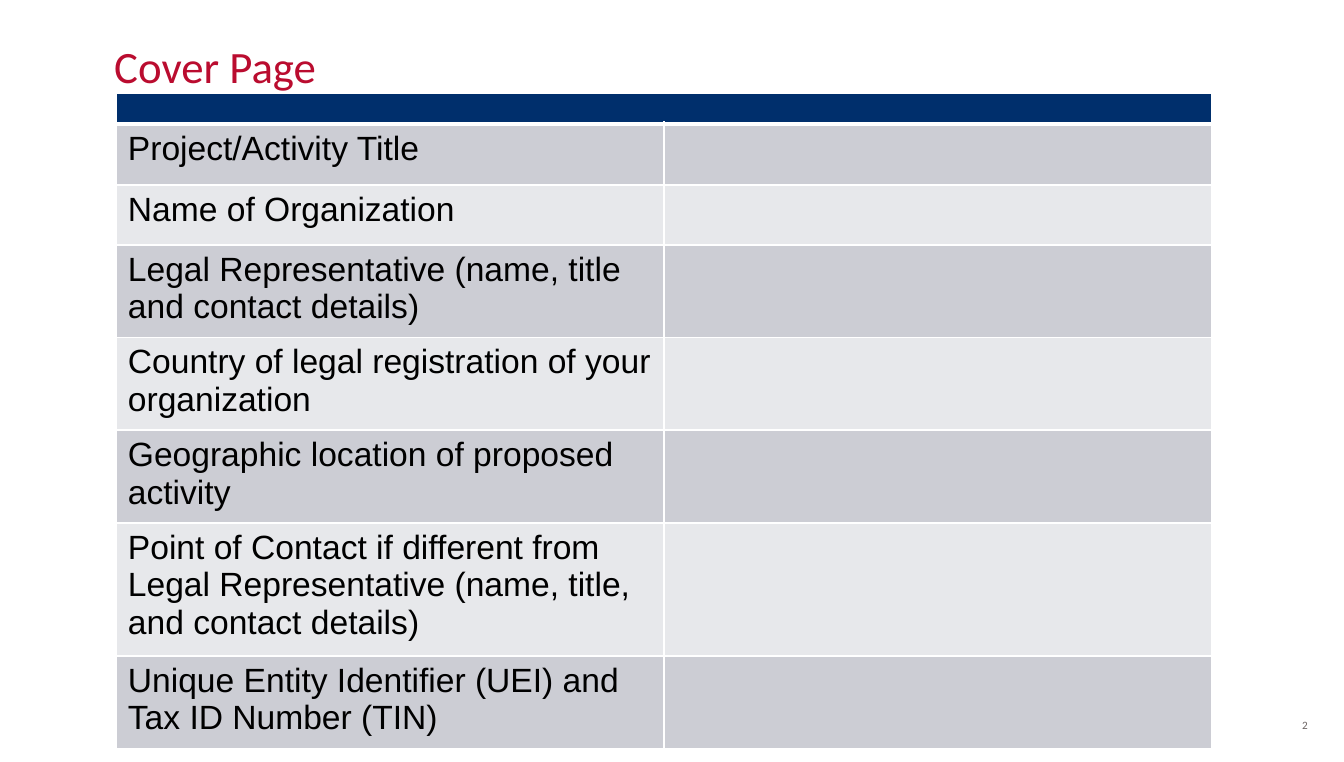
from dataclasses import dataclass

from lxml.etree import SubElement
from pptx import Presentation
from pptx.dml.color import RGBColor
from pptx.enum.text import MSO_ANCHOR, PP_ALIGN
from pptx.oxml.ns import qn
from pptx.util import Emu, Pt

TITLE = "Cover Page"
PAGE_NUMBER = "2"
# (label, row height in px)
FIELDS = [
    ("Project/Activity Title", 61),
    ("Name of Organization", 60),
    ("Legal Representative (name, title and contact details)", 89),
    ("Country of legal registration of your organization", 89),
    ("Geographic location of proposed activity", 89),
    ("Point of Contact if different from Legal Representative "
     "(name, title, and contact details)", 126),
    ("Unique Entity Identifier (UEI) and Tax ID Number (TIN)", 88),
]

SLIDE = (1344, 762)
TITLE_BOX = (101, 32, 1142, 67)
NUMBER_BOX = (1008, 712, 313, 27)
TABLE_LEFT, TABLE_TOP = 116, 93
COLUMN_WIDTH = 548
HEADER_HEIGHT = 31
CELL_INSET_X, CELL_INSET_Y = 12, 6


@dataclass(frozen=True)
class Theme:
    red: str = "BA0C2F"
    navy: str = "002F6C"
    black: str = "000000"
    grey: str = "6C6463"
    border: str = "FFFFFF"
    bands: tuple = ("CCCDD4", "E7E8EB")
    heading_font: str = "Calibri"
    body_font: str = "Arial"
    title_size: int = 24
    body_size: int = 18
    number_size: int = 6
    header_size: int = 6
    thin: int = 1
    thick: int = 3


THEME = Theme()


def px(length):
    return Emu(round(length * 914400 / 134.4))


def style(paragraph, font_name, size, color):
    font = paragraph.font
    font.name, font.size = font_name, Pt(size)
    font.color.rgb = RGBColor.from_string(color)


def add_label(slide, box, text, size, color, anchor, align):
    frame = slide.shapes.add_textbox(*map(px, box)).text_frame
    frame.word_wrap = True
    frame.vertical_anchor = anchor
    paragraph = frame.paragraphs[0]
    paragraph.text, paragraph.alignment = text, align
    style(paragraph, THEME.heading_font, size, color)


def set_borders(cell, bottom):
    properties = cell._tc.get_or_add_tcPr()
    widths = {"L": THEME.thin, "R": THEME.thin, "T": THEME.thin, "B": bottom}
    for side, width in widths.items():
        line = SubElement(properties, qn(f"a:ln{side}"), w=str(Pt(width)))
        solid = SubElement(line, qn("a:solidFill"))
        SubElement(solid, qn("a:srgbClr"), val=THEME.border)


def format_cell(cell, fill, text="", size=THEME.body_size, bottom=THEME.thin):
    cell.margin_left = cell.margin_right = px(CELL_INSET_X)
    cell.margin_top = cell.margin_bottom = px(CELL_INSET_Y)
    set_borders(cell, bottom)
    cell.fill.solid()
    cell.fill.fore_color.rgb = RGBColor.from_string(fill)
    paragraph = cell.text_frame.paragraphs[0]
    if text:
        paragraph.text = text
    else:
        # An empty cell takes its line height from the end-of-paragraph mark.
        SubElement(paragraph._p, qn("a:endParaRPr"), sz=str(size * 100))
    style(paragraph, THEME.body_font, size, THEME.black)


def add_form(slide):
    heights = [HEADER_HEIGHT] + [height for _, height in FIELDS]
    table = slide.shapes.add_table(
        len(heights), 2, px(TABLE_LEFT), px(TABLE_TOP),
        px(2 * COLUMN_WIDTH), px(sum(heights))).table
    for column in table.columns:
        column.width = px(COLUMN_WIDTH)
    for row, height in zip(table.rows, heights):
        row.height = px(height)

    for cell in table.rows[0].cells:
        format_cell(cell, THEME.navy, size=THEME.header_size, bottom=THEME.thick)
    table.cell(0, 0).merge(table.cell(0, 1))
    for index, (label, _) in enumerate(FIELDS):
        band = THEME.bands[index % 2]
        format_cell(table.cell(index + 1, 0), band, label)
        format_cell(table.cell(index + 1, 1), band)


def main():
    deck = Presentation()
    deck.slide_width, deck.slide_height = map(px, SLIDE)
    slide = deck.slides.add_slide(deck.slide_layouts[6])
    add_label(slide, NUMBER_BOX, PAGE_NUMBER, THEME.number_size, THEME.grey,
              MSO_ANCHOR.MIDDLE, PP_ALIGN.RIGHT)
    add_label(slide, TITLE_BOX, TITLE, THEME.title_size, THEME.red,
              MSO_ANCHOR.BOTTOM, PP_ALIGN.LEFT)
    add_form(slide)
    deck.save("out.pptx")


if __name__ == "__main__":
    main()
